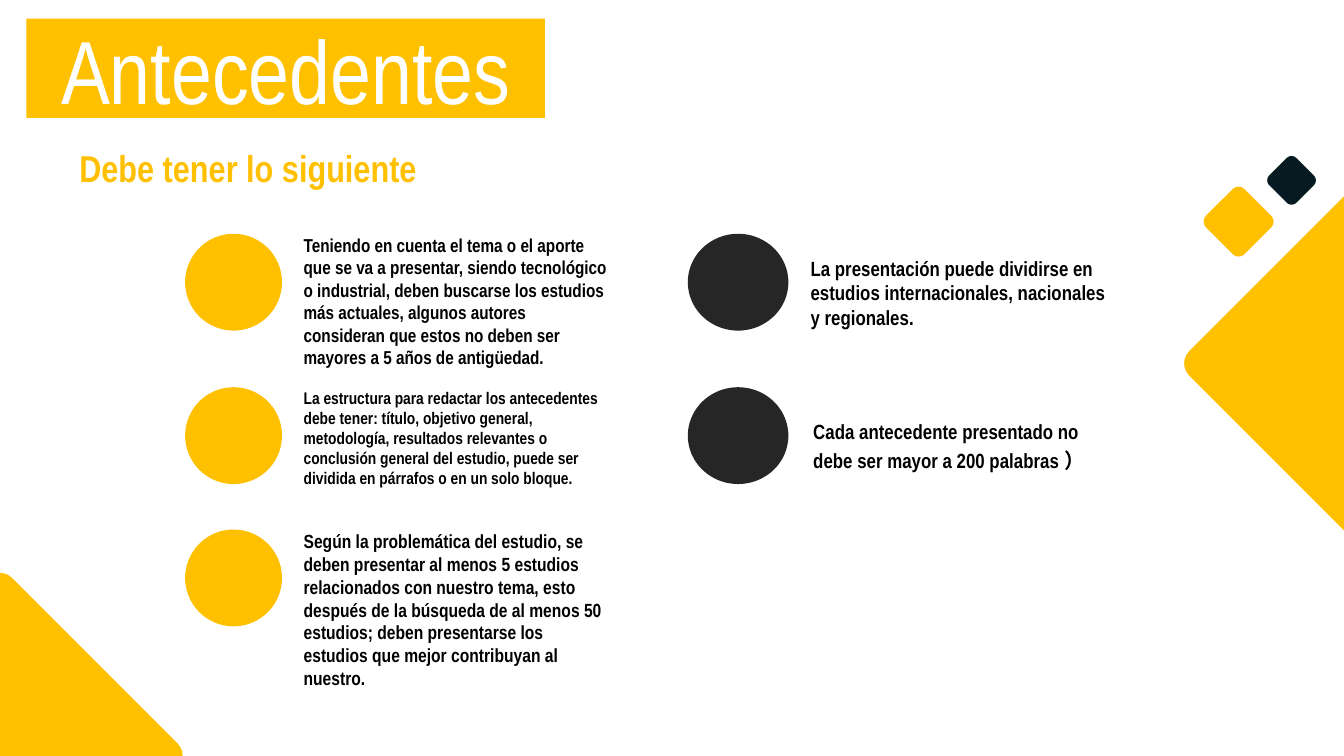
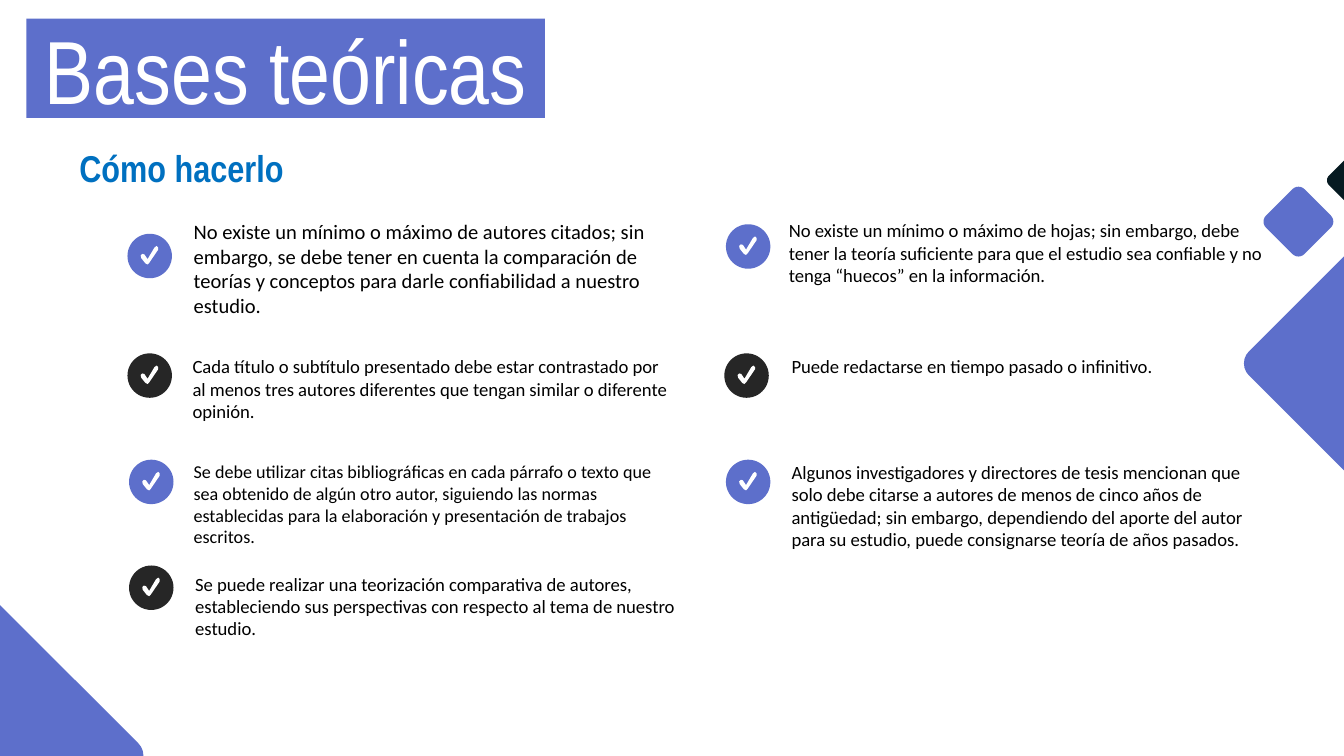
"""Build two thesis slides: background studies and theory."""
from dataclasses import dataclass
from math import cos, radians, sin

from pptx import Presentation
from pptx.dml.color import RGBColor
from pptx.enum import shapes as es, text as et
from pptx.util import Cm, Pt

GOLD = RGBColor(0xFF, 0xC0, 0x00)
BLUE = RGBColor(0x5D, 0x6F, 0xCB)
SKY = RGBColor(0x00, 0x70, 0xC0)
DARK = RGBColor(0x26, 0x26, 0x26)
NAVY = RGBColor(0x06, 0x1A, 0x21)
WHITE = RGBColor(0xFF, 0xFF, 0xFF)
BLACK = RGBColor(0x00, 0x00, 0x00)
NARROW = "Arial Narrow"
PLAIN = "Calibri"
PAD = 0.41
TICK = [(0.13, 0.35), (0.09, 0.33), (0.01, 0.23), (0, 0.18), (0.03, 0.15), (0.07, 0.16),
        (0.13, 0.25), (0.26, 0.03), (0.3, 0), (0.33, 0.03), (0.33, 0.07), (0.16, 0.32)]


@dataclass
class Font:
    """Look of a text run."""
    name: str
    size: float
    color: RGBColor = BLACK
    bold: bool = False


@dataclass
class Gem:
    """Rounded diamond, by centre, half width and corner radius in cm."""
    x: float
    y: float
    half: float
    round: float
    color: RGBColor


@dataclass
class Dot:
    """Round marker beside a text, in cm."""
    x: float
    y: float
    wide: float
    high: float
    color: RGBColor
    tick: bool = False


@dataclass
class Note:
    """Body text block, in cm."""
    x: float
    y: float
    wide: float
    high: float
    size: float
    text: str
    space: float = 1.0


@dataclass
class Page:
    """Content of one slide."""
    title: str
    head: str
    main: RGBColor
    tint: RGBColor
    font: str
    bold: bool
    shift: float
    base: float
    dots: list[Dot]
    notes: list[Note]


def paint(shape, color: RGBColor) -> None:
    """Give a shape a flat fill with no line or shadow."""
    shape.fill.solid()
    shape.fill.fore_color.rgb = color
    shape.line.fill.background()
    shape.shadow.inherit = False


def style(frame, font: Font) -> None:
    """Format every run of a text frame."""
    for para in frame.paragraphs:
        for run in para.runs:
            run.font.name = font.name
            run.font.size = Pt(font.size)
            run.font.bold = font.bold
            run.font.color.rgb = font.color


def trace(slide, points: list[tuple[float, float]], color: RGBColor) -> None:
    """Draw a filled outline through points in cm."""
    first, *rest = [(Cm(x), Cm(y)) for x, y in points]
    pen = slide.shapes.build_freeform(*first)
    pen.add_line_segments(rest)
    paint(pen.convert_to_shape(), color)


def draw_gem(slide, gem: Gem) -> None:
    """Draw a diamond with round corners."""
    points = []
    reach = gem.half - gem.round
    for turn in range(0, 360, 90):
        x = gem.x + reach * cos(radians(turn))
        y = gem.y + reach * sin(radians(turn))
        points += [(x + gem.round * cos(radians(turn + step)),
                    y + gem.round * sin(radians(turn + step))) for step in range(-45, 46, 15)]
    trace(slide, points, gem.color)


def draw_dot(slide, dot: Dot) -> None:
    """Draw a marker, with a tick if asked."""
    disc = slide.shapes.add_shape(es.MSO_SHAPE.OVAL, Cm(dot.x), Cm(dot.y), Cm(dot.wide), Cm(dot.high))
    paint(disc, dot.color)
    if dot.tick:
        trace(slide, [(dot.x + 0.25 + x, dot.y + 0.23 + y) for x, y in TICK], WHITE)


def draw_text(slide, note: Note, font: Font, pad: float = PAD):
    """Add a wrapped text box and return its frame."""
    frame = slide.shapes.add_textbox(Cm(note.x), Cm(note.y), Cm(note.wide), Cm(note.high)).text_frame
    frame.word_wrap = True
    frame.margin_left = frame.margin_right = Cm(pad)
    frame.margin_top = frame.margin_bottom = Cm(0)
    frame.text = note.text
    if note.space != 1:
        frame.paragraphs[0].line_spacing = note.space
    style(frame, font)
    return frame


def draw_title(slide, page: Page) -> None:
    """Set the title in its colour band."""
    band = slide.shapes.title
    band.left, band.top, band.width, band.height = Cm(0.5), Cm(0.35), Cm(9.8), Cm(1.88)
    paint(band, page.main)
    frame = band.text_frame
    frame.text = page.title
    frame.word_wrap = False
    frame.auto_size = et.MSO_AUTO_SIZE.NONE
    frame.vertical_anchor = et.MSO_ANCHOR.MIDDLE
    frame.paragraphs[0].alignment = et.PP_ALIGN.CENTER
    style(frame, Font(NARROW, 48, WHITE))


def draw_page(deck, page: Page) -> None:
    """Add one slide."""
    slide = deck.slides.add_slide(deck.slide_layouts[5])
    draw_title(slide, page)
    head = Note(1.5, 2.74, 11.23, 0.86, 20, page.head)
    frame = draw_text(slide, head, Font(NARROW, head.size, page.tint, True), 0)
    frame.auto_size = et.MSO_AUTO_SIZE.SHAPE_TO_FIT_TEXT
    for gem in (Gem(25.83 + page.shift, 6.87, 3.45, 0.32, page.main),
                Gem(24.41 + page.shift, 3.41, 0.46, 0.13, NAVY),
                Gem(23.41 + page.shift, 4.19, 0.66, 0.16, page.main),
                Gem(page.base, 14.28, 3.45, 0.32, page.main)):
        draw_gem(slide, gem)
    for dot in page.dots:
        draw_dot(slide, dot)
    for note in page.notes:
        draw_text(slide, note, Font(page.font, note.size, BLACK, page.bold))


ROWS = (4.42, 7.32, 10.01)
PAST = Page(
    "Antecedentes", "Debe tener lo siguiente", GOLD, GOLD, NARROW, True, 0, 0,
    [Dot(3.5, y, 1.83, 1.83, GOLD) for y in ROWS]
    + [Dot(13, y, 1.9, 1.83, DARK) for y in ROWS[:2]],
    [Note(5.33, ROWS[0], 6.6, 2.01, 10,
          "Teniendo en cuenta el tema o el aporte que se va a presentar, siendo tecnológico o "
          "industrial, deben buscarse los estudios más actuales, algunos autores consideran que "
          "estos no deben ser mayores a 5 años de antigüedad."),
     Note(5.33, ROWS[1], 6.6, 2.13, 9,
          "La estructura para redactar los antecedentes debe tener: título, objetivo general, "
          "metodología, resultados relevantes o conclusión general del estudio, puede ser "
          "dividida en párrafos o en un solo bloque."),
     Note(5.33, ROWS[2], 6.6, 2.21, 10.2,
          "Según la problemática del estudio, se deben presentar al menos 5 estudios relacionados "
          "con nuestro tema, esto después de la búsqueda de al menos 50 estudios; deben "
          "presentarse los estudios que mejor contribuyan al nuestro."),
     Note(14.91, 4.83, 6.6, 2.29, 11,
          "La presentación puede dividirse en estudios internacionales, nacionales y regionales."),
     Note(14.96, 7.82, 6.6, 2.18, 11,
          "Cada antecedente presentado no debe ser mayor a 200 palabras ）", 1.2)])

SPOTS = [(2.41, 4.42, BLUE), (2.41, 6.68, DARK), (2.44, 8.69, BLUE), (2.44, 10.69, DARK),
         (13.72, 4.24, BLUE), (13.69, 6.68, DARK), (13.72, 8.69, BLUE)]
THEORY = Page(
    "Bases teóricas", "Cómo hacerlo", BLUE, SKY, PLAIN, False, 1.13, -0.74,
    [Dot(x, y, 0.84, 0.84, color, True) for x, y, color in SPOTS],
    [Note(3.25, 4.14, 9.88, 1.02, 11,
          "No existe un mínimo o máximo de autores citados; sin embargo, se debe tener en cuenta "
          "la comparación de teorías y conceptos para darle confiabilidad a nuestro estudio."),
     Note(3.23, 6.71, 9.88, 1.47, 10,
          "Cada título o subtítulo presentado debe estar contrastado por al menos tres autores "
          "diferentes que tengan similar o diferente opinión."),
     Note(3.25, 8.71, 9.88, 1.42, 9.7,
          "Se debe utilizar citas bibliográficas en cada párrafo o texto que sea obtenido de algún "
          "otro autor, siguiendo las normas establecidas para la elaboración y presentación de "
          "trabajos escritos."),
     Note(3.28, 10.82, 9.88, 1.42, 10,
          "Se puede realizar una teorización comparativa de autores, estableciendo sus "
          "perspectivas con respecto al tema de nuestro estudio."),
     Note(14.5, 4.14, 9.88, 1.42, 10,
          "No existe un mínimo o máximo de hojas; sin embargo, debe tener la teoría suficiente "
          "para que el estudio sea confiable y no tenga “huecos” en la información."),
     Note(14.55, 6.71, 9.88, 1.42, 10, "Puede redactarse en tiempo pasado o infinitivo."),
     Note(14.55, 8.71, 9.88, 1.73, 10,
          "Algunos investigadores y directores de tesis mencionan que solo debe citarse a autores "
          "de menos de cinco años de antigüedad; sin embargo, dependiendo del aporte del autor "
          "para su estudio, puede consignarse teoría de años pasados.")])


def main() -> None:
    """Build and save the deck."""
    deck = Presentation()
    deck.slide_width, deck.slide_height = Cm(25.4), Cm(14.29)
    for page in (PAST, THEORY):
        draw_page(deck, page)
    deck.save("out.pptx")


if __name__ == "__main__":
    main()
